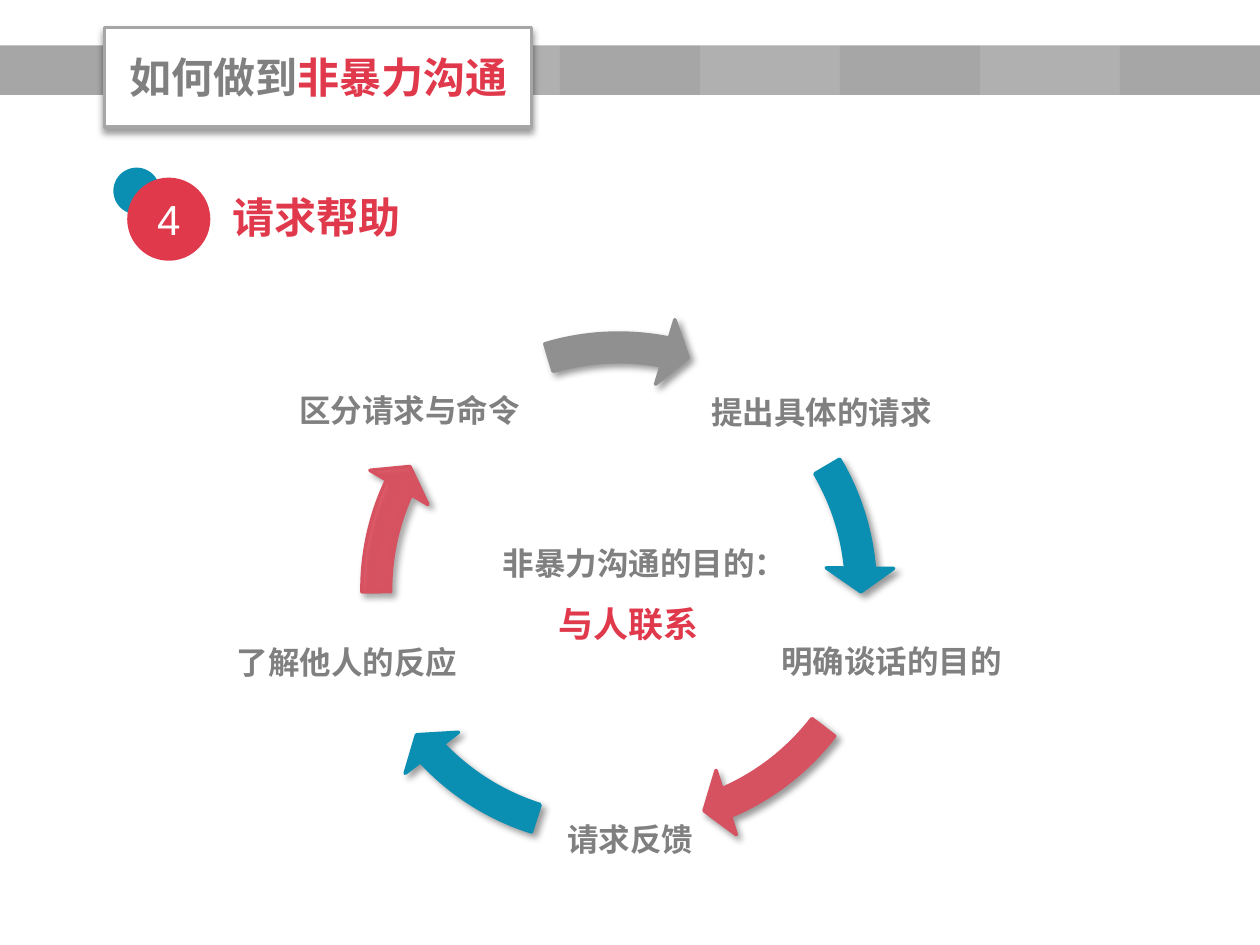
"""Build the slide on requesting help in non-violent communication."""
from dataclasses import dataclass

from lxml.etree import SubElement
from pptx import Presentation
from pptx.dml.color import RGBColor
from pptx.enum.shapes import MSO_SHAPE
from pptx.enum.text import MSO_ANCHOR, MSO_AUTO_SIZE, PP_ALIGN
from pptx.oxml.ns import qn
from pptx.util import Pt


@dataclass(frozen=True)
class Theme:
    chinese: str = "Noto Sans CJK SC"
    latin: str = "Arial"
    red: str = "E1394C"
    soft_red: str = "D65261"
    blue: str = "0A8EB2"
    gray: str = "808080"
    arrow_gray: str = "909090"
    frame: str = "A6A6A6"
    light_band: str = "B0B0B0"
    white: str = "FFFFFF"
    heading: int = 24
    emphasis: int = 20
    body: int = 18


THEME = Theme()
TITLE = [("如何做到", THEME.gray, THEME.heading), ("非暴力沟通", THEME.red, THEME.heading)]
SECTION = [("请求帮助", THEME.red, THEME.heading)]
PURPOSE = [("非暴力沟通的目的：", THEME.gray, THEME.body), ("与人联系", THEME.red, THEME.emphasis)]
STEPS = [
    ("提出具体的请求", 402.5, 194.4, 134),
    ("明确谈话的目的", 440.6, 337, 137.5),
    ("请求反馈", 318.2, 438.5, 84.2),
    ("了解他人的反应", 127.4, 337.7, 141.8),
    ("区分请求与命令", 159.1, 193.7, 149.8),
]
STEP_HEIGHT = 84.2
ARROWS = [
    (195.8, 179.3, 212.935, 197.66, THEME.blue, THEME.blue, 100),
    (203, 173.5, 40.15, 22.532, THEME.soft_red, THEME.soft_red, 100),
    (190.1, 177.8, 82.11, 64.492, THEME.blue, THEME.blue, 100),
    (195.8, 179.3, 122.982, 107.706, THEME.red, THEME.soft_red, 78),
    (195.8, 179.3, 168.66, 151.982, THEME.arrow_gray, THEME.arrow_gray, 100),
]
ARROW_SIZE = 315.4
BAND_SLOTS = (0, 3, 4, 5, 6, 7, 8)
BAND_WIDTH = 80
CIRCLES = [
    (64.8, 95.8, 26.6, THEME.blue, ""),
    (72.7, 101.5, 47.5, THEME.red, "4"),
]


def paint(shape, fill, line=None, opacity=100):
    shape.shadow.inherit = False
    shape.fill.solid()
    shape.fill.fore_color.rgb = RGBColor.from_string(fill)
    if opacity < 100:
        color = shape.element.spPr.find(qn("a:solidFill"))[0]
        SubElement(color, qn("a:alpha"), val=str(opacity * 1000))
    if line:
        shape.line.color.rgb = RGBColor.from_string(line)
        shape.line.width = Pt(2)
    else:
        shape.line.fill.background()


def cast_shadow(shape, angle):
    effects = shape.element.spPr.find(qn("a:effectLst"))
    shadow = SubElement(effects, qn("a:outerShdw"), blurRad=str(Pt(4)), dist=str(Pt(3)),
                        dir=str(angle * 60000), algn="ctr", rotWithShape="0")
    color = SubElement(shadow, qn("a:srgbClr"), val="000000")
    SubElement(color, qn("a:alpha"), val="40000")


def write(shape, spans, align=PP_ALIGN.CENTER, anchor=MSO_ANCHOR.MIDDLE, spacing=1.0,
          inset=None, font=THEME.chinese, bold=True):
    frame = shape.text_frame
    frame.word_wrap = True
    frame.auto_size = MSO_AUTO_SIZE.NONE
    frame.vertical_anchor = anchor
    if inset is not None:
        frame.margin_left = frame.margin_right = Pt(inset)
        frame.margin_top = frame.margin_bottom = Pt(inset)
    para = frame.paragraphs[0]
    para.alignment = align
    para.line_spacing = spacing
    para.space_before = Pt(0)
    for text, color, size in spans:
        span = para.add_run()
        span.text = text
        span.font.name = font
        span.font.size = Pt(size)
        span.font.bold = bold
        span.font.color.rgb = RGBColor.from_string(color)
        SubElement(span.font._element, qn("a:ea"), typeface=font)


def add_shape(page, kind, left, top, width, height):
    return page.shapes.add_shape(kind, Pt(left), Pt(top), Pt(width), Pt(height))


def add_text(page, left, top, width, height, spans, **layout):
    box = page.shapes.add_textbox(Pt(left), Pt(top), Pt(width), Pt(height))
    write(box, spans, **layout)


def add_cycle(page):
    add_text(page, 274.3, 296.6, 169.9, 76.3, PURPOSE, anchor=MSO_ANCHOR.TOP, spacing=1.5)
    for step, arrow in zip(STEPS, ARROWS):
        label, left, top, width = step
        add_text(page, left, top, width, STEP_HEIGHT, [(label, THEME.gray, THEME.body)],
                 spacing=0.9, inset=1.44)
        left, top, end, start, fill, line, opacity = arrow
        shape = add_shape(page, MSO_SHAPE.CIRCULAR_ARROW, left, top, ARROW_SIZE, ARROW_SIZE)
        for index, value in enumerate((0.052, 3.358, end, start, 0.061)):
            shape.adjustments[index] = value
        paint(shape, fill, line, opacity)
        cast_shadow(shape, 45)


def add_header(page):
    for slot in BAND_SLOTS:
        band = add_shape(page, MSO_SHAPE.RECTANGLE, slot * BAND_WIDTH, 26, BAND_WIDTH, 28.2)
        paint(band, THEME.light_band if slot % 2 else THEME.frame)
    title = page.shapes.title
    title.left, title.top, title.width, title.height = Pt(59.8), Pt(15.6), Pt(244), Pt(57)
    paint(title, THEME.white, THEME.frame)
    cast_shadow(title, 90)
    write(title, TITLE)
    title.element.getparent().append(title.element)


def add_section(page):
    add_text(page, 126, 105.8, 311.8, 36, SECTION, align=PP_ALIGN.LEFT, anchor=MSO_ANCHOR.TOP)
    for left, top, size, fill, number in CIRCLES:
        circle = add_shape(page, MSO_SHAPE.OVAL, left, top, size, size)
        paint(circle, fill)
        if number:
            write(circle, [(number, THEME.white, THEME.heading)], inset=0,
                  font=THEME.latin, bold=False)


def main():
    deck = Presentation()
    deck.slide_width, deck.slide_height = Pt(720), Pt(540)
    page = deck.slides.add_slide(deck.slide_layouts[5])
    add_cycle(page)
    add_header(page)
    add_section(page)
    deck.save("out.pptx")


if __name__ == "__main__":
    main()
